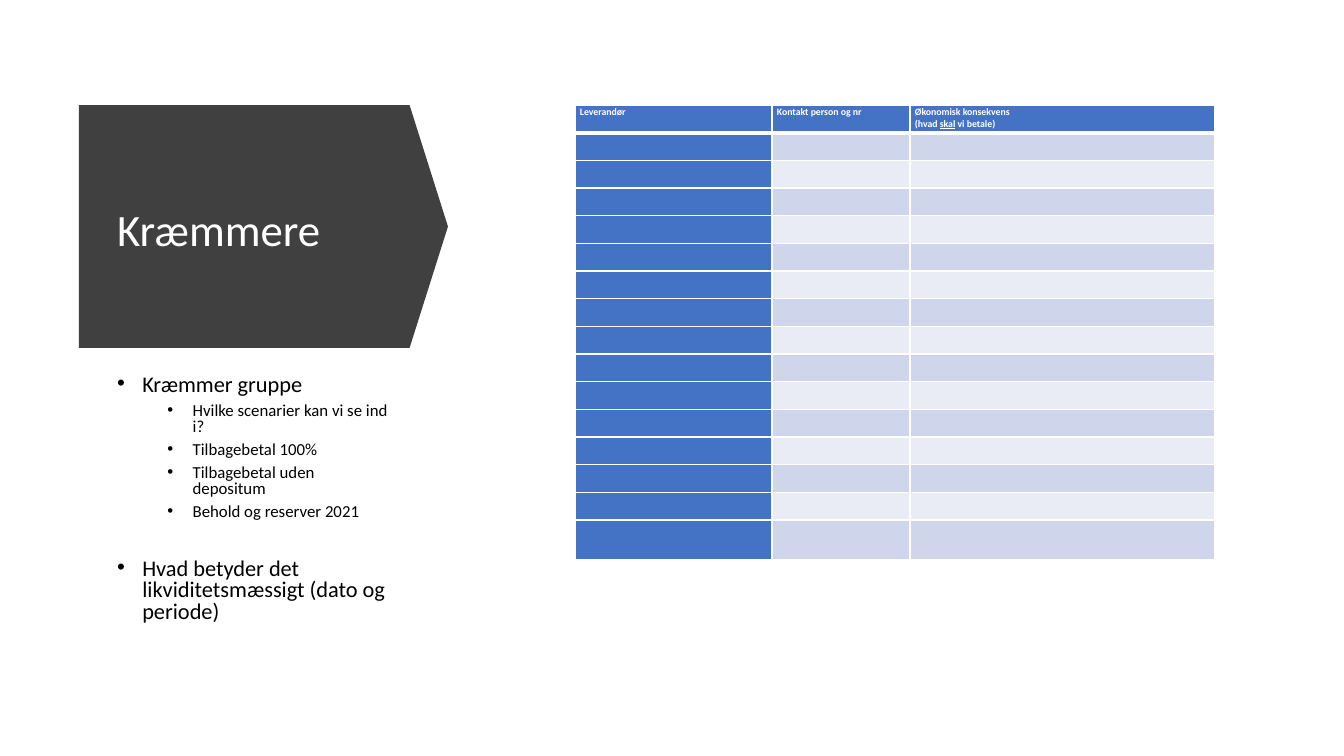
import pptx
import pptx.util
import pptx.dml.color
import pptx.enum.shapes
import pptx.enum.text
import pptx.oxml
import pptx.oxml.ns
import lxml.etree

PX = 914400 / 100.8
FONT = "Calibri"
COLORS = {"arrow": "404040", "blue": "4472C4", "odd": "CFD5EA", "even": "E9EBF5",
          "white": "FFFFFF", "black": "000000"}
RGB = {name: pptx.dml.color.RGBColor.from_string(c) for name, c in COLORS.items()}
Pt = pptx.util.Pt
qn = pptx.oxml.ns.qn


def px(*values):
    return [round(v * PX) for v in values]


def add_run(p, text, size, color, bold=False):
    r = p.add_run()
    r.text = text
    r.font.name = FONT
    r.font.size = Pt(size)
    r.font.bold = bold
    r.font.color.rgb = RGB[color]
    return r


prs = pptx.Presentation()
prs.slide_width, prs.slide_height = px(1344, 756)
s = prs.slides.add_slide(prs.slide_layouts[1])

arrow = s.shapes.add_shape(pptx.enum.shapes.MSO_SHAPE.DOWN_ARROW, *px(142, 42, 243, 369))
arrow.rotation = 270
arrow.adjustments[0] = 1
arrow.adjustments[1] = 0.158
arrow.shadow.inherit = False
arrow.fill.solid()
arrow.fill.fore_color.rgb = RGB["arrow"]
arrow.line.fill.background()
s.shapes._spTree.insert(2, arrow._element)

title, body = s.placeholders
title.left, title.top, title.width, title.height = px(107, 133, 294, 197)
body.left, body.top, body.width, body.height = px(107, 370, 294, 267)
for sp in (title, body):
    sp.text_frame.word_wrap = True
    sp.text_frame.auto_size = pptx.enum.text.MSO_AUTO_SIZE.NONE

title.text_frame.vertical_anchor = pptx.enum.text.MSO_ANCHOR.MIDDLE
p = title.text_frame.paragraphs[0]
p.alignment = pptx.enum.text.PP_ALIGN.LEFT
p.line_spacing = 0.9
add_run(p, "Kræmmere", 32, "white")

items = [
    (0, "Kræmmer gruppe", 10),
    (1, "Hvilke scenarier kan vi se ind i?", 5),
    (1, "Tilbagebetal 100%", 5),
    (1, "Tilbagebetal uden depositum", 5),
    (1, "Behold og reserver 2021", 5),
    (0, "Hvad betyder det likviditetsmæssigt (dato og periode)", 27),
]
tf = body.text_frame
for i, (level, text, before) in enumerate(items):
    p = tf.add_paragraph() if i else tf.paragraphs[0]
    p.level = level
    p.line_spacing = 0.8
    p.space_before = Pt(before)
    pPr = p._p.get_or_add_pPr()
    pPr.set("marL", str(228600 + 457200 * level))
    pPr.set("indent", "-228600")
    lxml.etree.SubElement(pPr, qn("a:buFont")).set("typeface", "Arial")
    lxml.etree.SubElement(pPr, qn("a:buChar")).set("char", "•")
    add_run(p, text, 12 if level else 16, "black")

columns = px(197, 138, 305)
header_and_body, last_row = px(415, 40)
table = s.shapes.add_table(16, 3, *px(575, 105, 640, 455)).table
for column, width in zip(table.columns, columns):
    column.width = width
for i, row in enumerate(table.rows):
    row.height = last_row if i == 15 else header_and_body // 15
    for j, cell in enumerate(row.cells):
        cell.margin_left, cell.margin_right, cell.margin_top, cell.margin_bottom = px(5, 5, 1, 0)
        tcPr = cell._tc.get_or_add_tcPr()
        for side in ("L", "R", "T", "B"):
            thick = (i, side) in ((0, "B"), (1, "T"))
            ln = lxml.etree.SubElement(tcPr, qn("a:ln" + side))
            ln.set("w", str(Pt(3 if thick else 1)))
            solid = lxml.etree.SubElement(ln, qn("a:solidFill"))
            lxml.etree.SubElement(solid, qn("a:srgbClr")).set("val", COLORS["white"])
        cell.fill.solid()
        shade = "blue" if i == 0 or j == 0 else "odd" if i % 2 else "even"
        cell.fill.fore_color.rgb = RGB[shade]
        if i:
            cell.text_frame.paragraphs[0]._p.get_or_add_endParaRPr().set("sz", "700")

headings = [
    [["Leverandør"]],
    [["Kontakt person og nr"]],
    [["Økonomisk konsekvens"], ["(hvad ", "skal", " vi betale)"]],
]
for j, lines in enumerate(headings):
    tf = table.cell(0, j).text_frame
    for i, runs in enumerate(lines):
        p = tf.add_paragraph() if i else tf.paragraphs[0]
        for text in runs:
            r = add_run(p, text, 7, "white", bold=True)
            r.font.underline = text == "skal"

prs.save("out.pptx")
